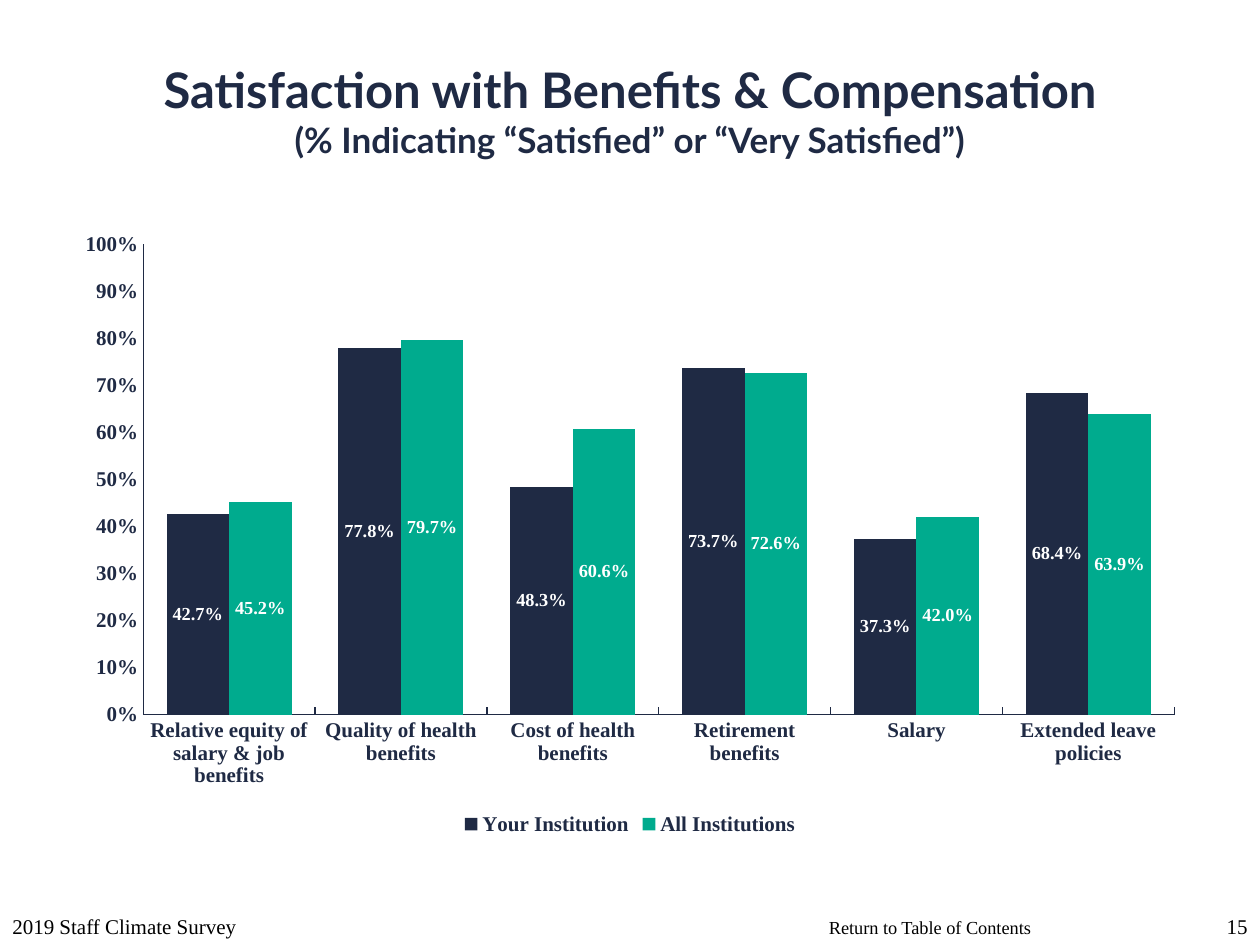
from pptx import Presentation
from pptx.chart.data import CategoryChartData
from pptx.dml.color import RGBColor
from pptx.enum.chart import (XL_CHART_TYPE, XL_LABEL_POSITION,
                             XL_LEGEND_POSITION, XL_TICK_MARK)
from pptx.enum.text import MSO_ANCHOR, PP_ALIGN
from pptx.util import Inches, Pt

NAVY = RGBColor(0x1F, 0x2A, 0x44)
TEAL = RGBColor(0x00, 0xAB, 0x8E)
WHITE = RGBColor(0xFF, 0xFF, 0xFF)
BLACK = RGBColor(0, 0, 0)
SERIF = "Times New Roman"

TITLE = "Satisfaction with Benefits & Compensation\v(% Indicating “Satisfied” or “Very Satisfied”)"
FOOTER = [
    ("Return to Table of Contents", (6.48, 7.22, 1.82, 0.28), 10.5,
     PP_ALIGN.LEFT, MSO_ANCHOR.TOP, False),
    ("2019 Staff Climate Survey", (0, 7, 3.17, 0.5), 12,
     PP_ALIGN.LEFT, MSO_ANCHOR.BOTTOM, True),
    ("15", (9.5, 7, 0.5, 0.5), 12, PP_ALIGN.RIGHT, MSO_ANCHOR.BOTTOM, True),
]
ROWS = [
    ("Relative equity of salary & job benefits", 0.427, 0.452),
    ("Quality of health benefits", 0.778, 0.797),
    ("Cost of health benefits", 0.483, 0.606),
    ("Retirement benefits", 0.737, 0.726),
    ("Salary", 0.373, 0.42),
    ("Extended leave policies", 0.684, 0.639),
]
SERIES = [("Your Institution", NAVY), ("All Institutions", TEAL)]


def style(font, size, color, bold=True, name=SERIF):
    font.size = Pt(size)
    font.bold = bold
    font.name = name
    font.color.rgb = color


def add_text(slide, text, box, align, anchor, wrap=True):
    frame = slide.shapes.add_textbox(*map(Inches, box)).text_frame
    frame.word_wrap = wrap
    frame.vertical_anchor = anchor
    frame.text = text
    frame.paragraphs[0].alignment = align
    return frame.paragraphs[0].runs


def add_bars(slide):
    data = CategoryChartData(number_format="0.0%")
    names, *columns = zip(*ROWS)
    data.categories = names
    for (name, _), values in zip(SERIES, columns):
        data.add_series(name, values)
    box = map(Inches, (0.5, 1.75, 9, 4.92))
    chart = slide.shapes.add_chart(XL_CHART_TYPE.COLUMN_CLUSTERED, *box, data).chart
    style(chart.font, 10, NAVY)
    chart.has_title = False
    chart.has_legend = True
    chart.legend.position = XL_LEGEND_POSITION.BOTTOM
    chart.legend.include_in_layout = False
    style(chart.legend.font, 12, NAVY)

    ticks = (XL_TICK_MARK.INSIDE, XL_TICK_MARK.NONE)
    for axis, tick in zip((chart.category_axis, chart.value_axis), ticks):
        axis.major_tick_mark = tick
        axis.minor_tick_mark = XL_TICK_MARK.NONE
        axis.has_major_gridlines = False
        axis.format.line.color.rgb = NAVY
        axis.format.line.width = Pt(0.75)
        style(axis.tick_labels.font, 12, NAVY)
    scale = chart.value_axis
    scale.minimum_scale, scale.maximum_scale, scale.major_unit = 0, 1, 0.1
    scale.tick_labels.number_format = "0%"
    scale.tick_labels.number_format_is_linked = False

    plot = chart.plots[0]
    plot.gap_width = 75
    plot.overlap = 0
    plot.vary_by_categories = False
    for bars, (_, color) in zip(plot.series, SERIES):
        bars.format.fill.solid()
        bars.format.fill.fore_color.rgb = color
        labels = bars.data_labels
        labels.show_value = True
        labels.position = XL_LABEL_POSITION.CENTER
        labels.number_format = "0.0%"
        labels.number_format_is_linked = False
        style(labels.font, 10.5, WHITE)


def main():
    deck = Presentation()
    deck.slide_width, deck.slide_height = Inches(10), Inches(7.5)
    slide = deck.slides.add_slide(deck.slide_layouts[6])
    lines = add_text(slide, TITLE, (0, 0.25, 10, 1.25),
                     PP_ALIGN.CENTER, MSO_ANCHOR.MIDDLE)
    for run, size in zip(lines, (28, 20)):
        style(run.font, size, NAVY, name="Lato")
    add_bars(slide)
    for text, box, size, align, anchor, wrap in FOOTER:
        for run in add_text(slide, text, box, align, anchor, wrap):
            style(run.font, size, BLACK, bold=False)
    deck.save("out.pptx")


if __name__ == "__main__":
    main()
